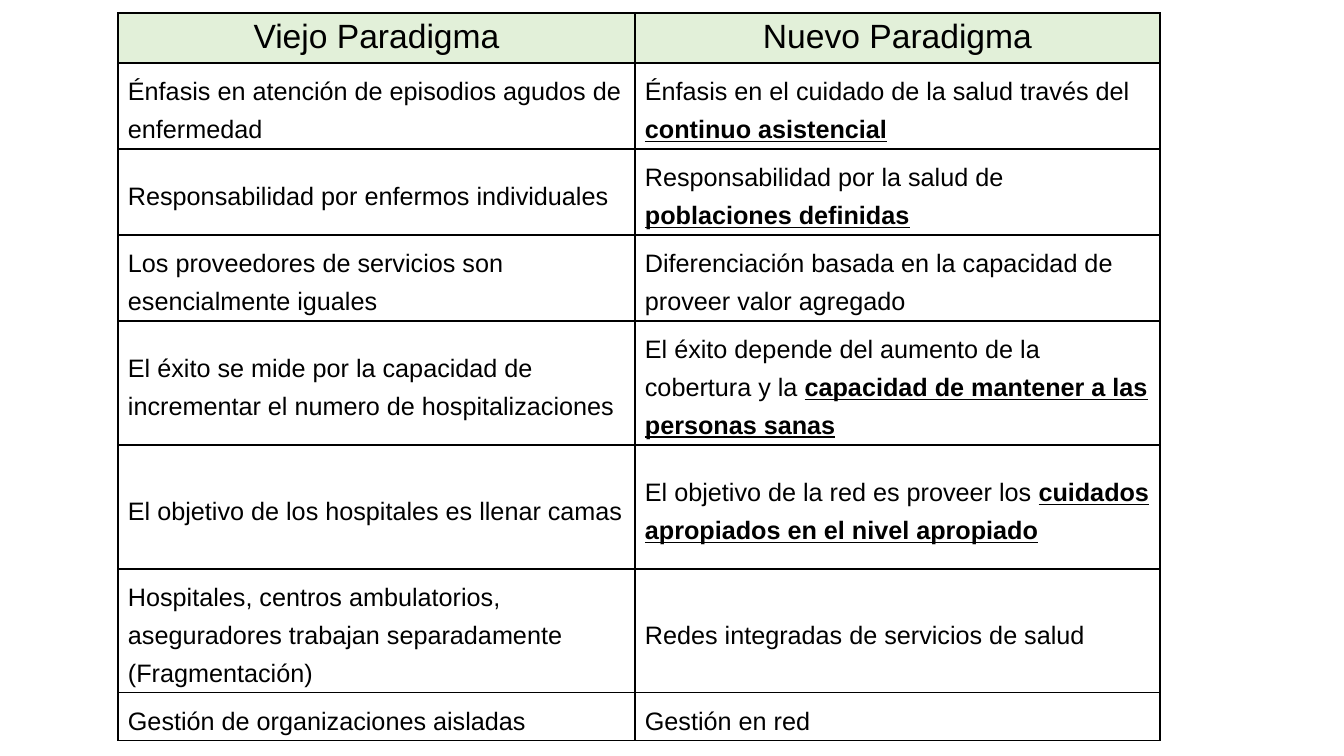
from lxml import etree
from pptx import Presentation
from pptx.dml.color import RGBColor
from pptx.enum.text import MSO_ANCHOR, PP_ALIGN
from pptx.oxml.ns import qn
from pptx.util import Emu, Pt

TOP, MIDDLE = MSO_ANCHOR.TOP, MSO_ANCHOR.MIDDLE
LEFT, CENTER = PP_ALIGN.LEFT, PP_ALIGN.CENTER

# Content: each cell is (plain text, emphasised text)
HEADERS = [("Viejo Paradigma", ""), ("Nuevo Paradigma", "")]
ROWS = [
    [("Énfasis en atención de episodios agudos de enfermedad", ""),
     ("Énfasis en el cuidado de la salud través del ", "continuo asistencial")],
    [("Responsabilidad por enfermos individuales", ""),
     ("Responsabilidad por la salud de ", "poblaciones definidas")],
    [("Los proveedores de servicios son esencialmente iguales", ""),
     ("Diferenciación basada en la capacidad de proveer valor agregado", "")],
    [("El éxito se mide por la capacidad de incrementar el numero de hospitalizaciones", ""),
     ("El éxito depende del aumento de la cobertura y la ",
      "capacidad de mantener a las personas sanas")],
    [("El objetivo de los hospitales es llenar camas", ""),
     ("El objetivo de la red es proveer los ",
      "cuidados apropiados en el nivel apropiado")],
    [("Hospitales, centros ambulatorios, aseguradores trabajan separadamente (Fragmentación)", ""),
     ("Redes integradas de servicios de salud", "")],
    [("Gestión de organizaciones aisladas", ""), ("Gestión en red", "")],
]

# Layout in px
SLIDE_W, SLIDE_H = 1344, 756
TABLE_X, TABLE_Y = 118, 13
COL_WIDTHS = [517, 525]
ROW_HEIGHTS = [50, 86, 86, 86, 124, 124, 124, 48]
MARGIN_X, MARGIN_Y = 10, 5

FONT = "Arial"
BLACK = RGBColor(0x00, 0x00, 0x00)
WHITE = RGBColor(0xFF, 0xFF, 0xFF)
PALE_GREEN = RGBColor(0xE2, 0xF0, 0xD9)


def px(n):
    return Emu(round(n * 914400 / 100.8))


def add_borders(cell):
    tcPr = cell._tc.get_or_add_tcPr()
    for side in ("lnL", "lnR", "lnT", "lnB"):
        ln = etree.SubElement(tcPr, qn(f"a:{side}"), w=str(Pt(1)))
        fill = etree.SubElement(ln, qn("a:solidFill"))
        etree.SubElement(fill, qn("a:srgbClr"), val=str(BLACK))


def fill_cell(cell, parts, is_header):
    add_borders(cell)
    cell.fill.solid()
    cell.fill.fore_color.rgb = PALE_GREEN if is_header else WHITE
    cell.margin_left = cell.margin_right = px(MARGIN_X)
    cell.margin_top = cell.margin_bottom = px(MARGIN_Y)
    cell.vertical_anchor = TOP if is_header else MIDDLE
    p = cell.text_frame.paragraphs[0]
    p.alignment = CENTER if is_header else LEFT
    p.line_spacing = Pt(27)
    for text, emphasis in zip(parts, (False, True)):
        if not text:
            continue
        r = p.add_run()
        r.text = text
        r.font.name = FONT
        r.font.size = Pt(24 if is_header else 18)
        r.font.color.rgb = BLACK
        r.font.bold = r.font.underline = emphasis


def main():
    prs = Presentation()
    prs.slide_width, prs.slide_height = px(SLIDE_W), px(SLIDE_H)
    s = prs.slides.add_slide(prs.slide_layouts[6])

    # Comparison table
    rows = [HEADERS] + ROWS
    table = s.shapes.add_table(
        len(rows), len(COL_WIDTHS), px(TABLE_X), px(TABLE_Y),
        px(sum(COL_WIDTHS)), px(sum(ROW_HEIGHTS))).table
    table.horz_banding = False
    table.first_row = False
    for column, width in zip(table.columns, COL_WIDTHS):
        column.width = px(width)
    for i, (row, height) in enumerate(zip(table.rows, ROW_HEIGHTS)):
        row.height = px(height)
        for cell, parts in zip(row.cells, rows[i]):
            fill_cell(cell, parts, i == 0)

    prs.save("out.pptx")


if __name__ == "__main__":
    main()
